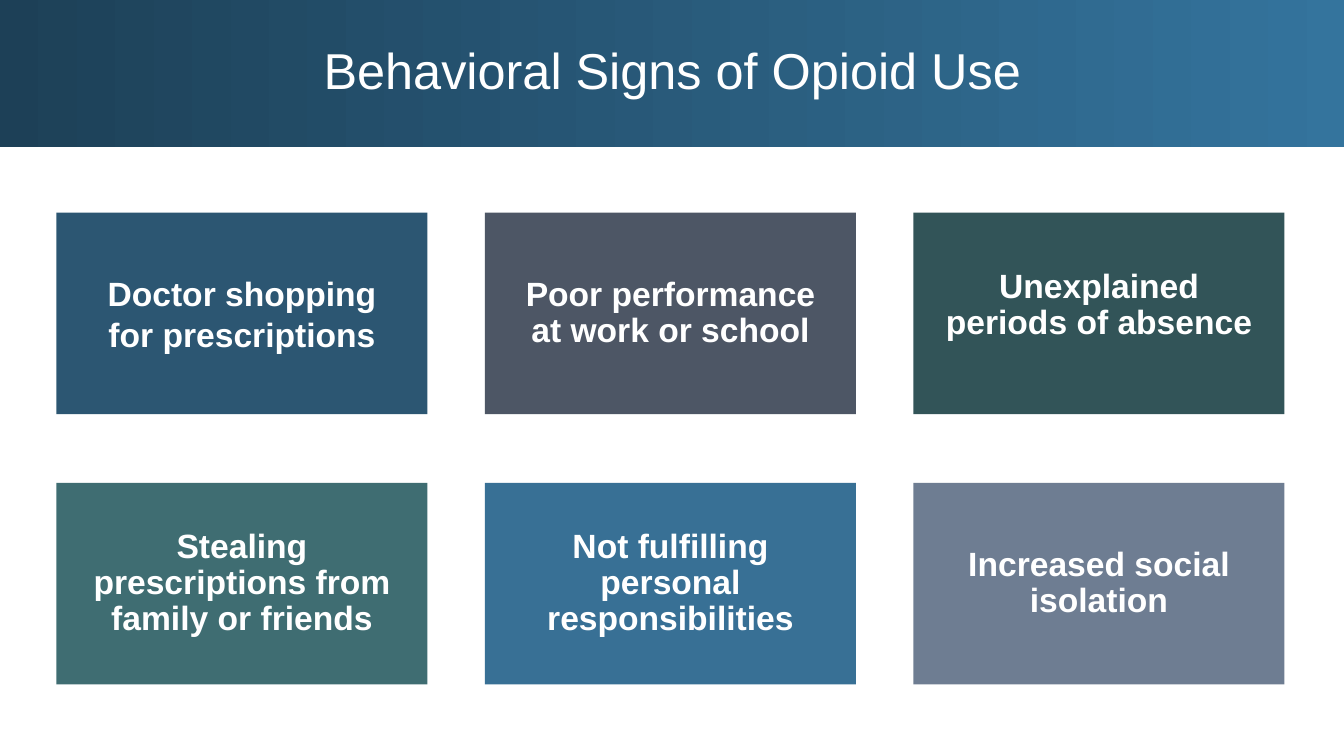
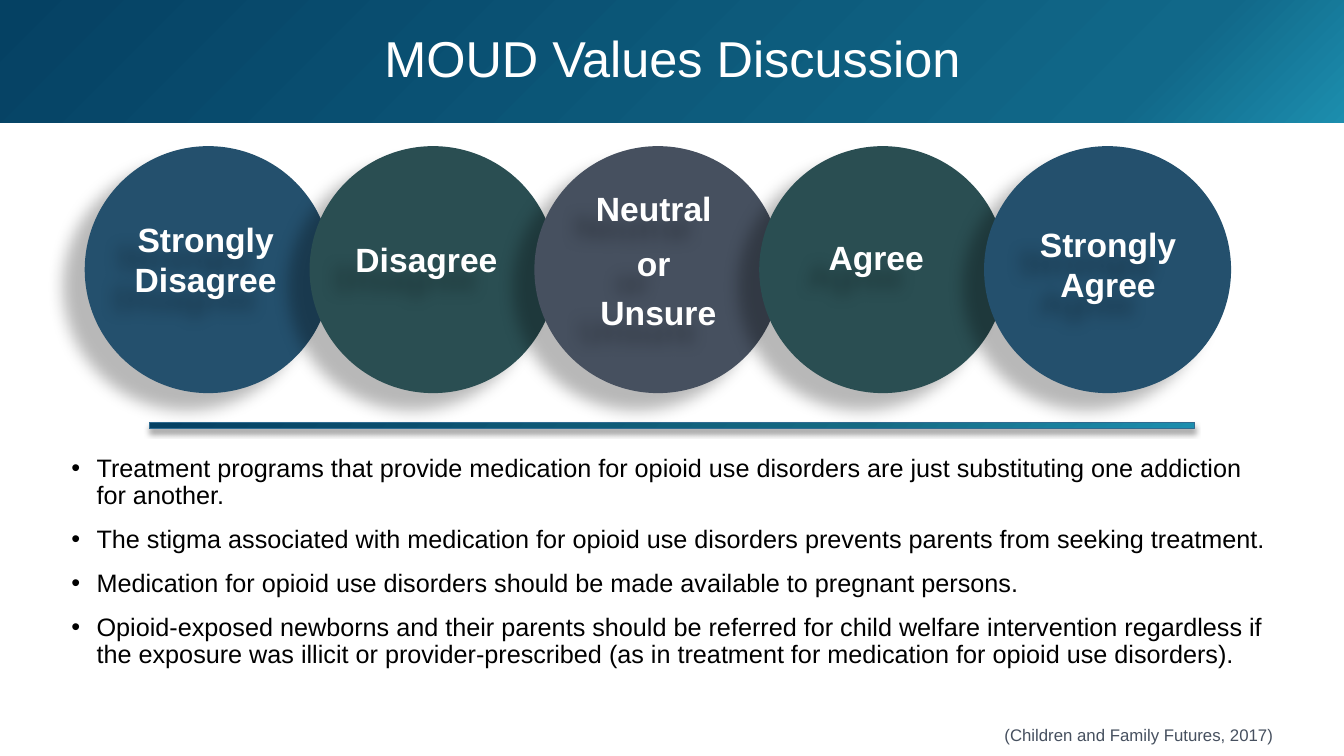
from lxml import etree
from pptx import Presentation
from pptx.dml.color import RGBColor
from pptx.enum.shapes import MSO_SHAPE
from pptx.enum.text import MSO_ANCHOR, PP_ALIGN
from pptx.oxml.ns import qn
from pptx.util import Inches, Pt

RECTANGLE, OVAL = MSO_SHAPE.RECTANGLE, MSO_SHAPE.OVAL
MIDDLE = MSO_ANCHOR.MIDDLE
LEFT, CENTER, RIGHT = PP_ALIGN.LEFT, PP_ALIGN.CENTER, PP_ALIGN.RIGHT

# Shared style
FONT = "Arial"
WHITE = RGBColor(0xFF, 0xFF, 0xFF)
BLACK = RGBColor(0x00, 0x00, 0x00)
NAVY = RGBColor(0x24, 0x50, 0x6D)
TEAL = RGBColor(0x38, 0x68, 0x6D)
SLATE = RGBColor(0x46, 0x50, 0x5F)
BLUE = RGBColor(0x30, 0x6B, 0x91)
PINE = RGBColor(0x2A, 0x4E, 0x52)
GREY = RGBColor(0x69, 0x78, 0x8E)
SKY = RGBColor(0x34, 0x74, 0x9D)
MIDNIGHT = RGBColor(0x1D, 0x40, 0x57)
AQUA = RGBColor(0x1C, 0x8E, 0xAE)
OCEAN = RGBColor(0x11, 0x68, 0x89)
LAGOON = RGBColor(0x15, 0x6A, 0x83)
DEEP_SEA = RGBColor(0x05, 0x41, 0x63)

# Gradient stops (percent, colour) and counter-clockwise angles
SIGNS_BAND = [(0, SKY), (100, MIDNIGHT)], 180
VALUES_BAND = [(0, AQUA), (16, OCEAN), (100, DEEP_SEA)], 135
SCALE_BAR = [(0, AQUA), (32, LAGOON), (100, DEEP_SEA)], 135

# Shadows: opacity percent, blur points, distance points, direction degrees
CIRCLE_SHADOW = (28, 11.8, 19.7, 141)
BAR_SHADOW = (40, 4, 3, 90)

# Text, colour, line spacing, bottom inset
SIGNS = [
    ("Doctor shopping for prescriptions", NAVY, 1, 0.05),
    ("Poor performance at work or school", SLATE, 0.9, 0.05),
    ("Unexplained periods of absence", PINE, 0.9, 0.2),
    ("Stealing prescriptions from family or friends", TEAL, 0.9, 0.05),
    ("Not fulfilling personal responsibilities", BLUE, 0.9, 0.05),
    ("Increased social isolation", GREY, 0.9, 0.05),
]

# Paragraphs, circle colour, label left, label top, line spacing
OPINIONS = [
    (["Strongly Disagree"], NAVY, 0.99, 1.92, 1),
    (["Disagree"], PINE, 3.18, 1.95, 0.9),
    (["Neutral ", "or ", "Unsure"], SLATE, 5.48, 1.93, 1),
    (["Agree"], PINE, 7.64, 1.93, 0.9),
    (["Strongly\nAgree"], NAVY, 9.94, 1.97, 1),
]

STATEMENTS = [
    "Treatment programs that provide medication for opioid use disorders are "
    "just substituting one addiction for another.",
    "The stigma associated with medication for opioid use disorders prevents "
    "parents from seeking treatment.",
    "Medication for opioid use disorders should be made available to pregnant "
    "persons.",
    "Opioid-exposed newborns and their parents should be referred for child "
    "welfare intervention regardless if the exposure was illicit or "
    "provider-prescribed (as in treatment for medication for opioid use "
    "disorders).",
]


def add_color(parent, color, opacity=None):
    element = etree.SubElement(parent, qn("a:srgbClr"), val=str(color))
    if opacity is not None:
        etree.SubElement(element, qn("a:alpha"), val=str(opacity * 1000))


def add_preset(slide, kind, left, top, width, height):
    shape = slide.shapes.add_shape(
        kind, Inches(left), Inches(top), Inches(width), Inches(height))
    shape.shadow.inherit = False
    shape.line.fill.background()
    return shape


def fill_solid(shape, color, opacity=None):
    shape.fill.solid()
    shape.fill.fore_color.rgb = color
    if opacity is not None:
        element = shape.element.spPr.find(".//" + qn("a:srgbClr"))
        etree.SubElement(element, qn("a:alpha"), val=str(opacity * 1000))


def fill_gradient(shape, stops, angle):
    shape.fill.gradient()
    shape.fill.gradient_angle = angle
    stop_list = shape.element.spPr.find(".//" + qn("a:gsLst"))
    for stop in list(stop_list):
        stop_list.remove(stop)
    for percent, color in stops:
        stop = etree.SubElement(stop_list, qn("a:gs"), pos=str(percent * 1000))
        add_color(stop, color)


def add_shadow(shape, opacity, blur, distance, direction):
    shape.shadow.inherit = False
    effects = shape.element.spPr.find(qn("a:effectLst"))
    shadow = etree.SubElement(
        effects, qn("a:outerShdw"), blurRad=str(int(Pt(blur))),
        dist=str(int(Pt(distance))), dir=str(direction * 60000),
        algn="ctr", rotWithShape="0")
    add_color(shadow, BLACK, opacity)


def add_bullet(paragraph):
    properties = paragraph._p.get_or_add_pPr()
    properties.set("marL", str(Inches(0.25)))
    properties.set("indent", str(Inches(-0.25)))
    etree.SubElement(properties, qn("a:buFont"), typeface=FONT)
    etree.SubElement(properties, qn("a:buChar"), char="•")


def write_text(shape, texts, size, color, bold=False, align=CENTER, spacing=1,
               before=(), after=0, bullets=False, insets=(0.1, 0.05, 0.1, 0.05)):
    """Write one paragraph per text; before lists the gaps between them."""
    frame = shape.text_frame
    frame.word_wrap = True
    frame.vertical_anchor = MIDDLE
    (frame.margin_left, frame.margin_top,
     frame.margin_right, frame.margin_bottom) = map(Inches, insets)
    for index, text in enumerate(texts):
        paragraph = frame.add_paragraph() if index else frame.paragraphs[0]
        if bullets:
            add_bullet(paragraph)
        paragraph.alignment = align
        paragraph.line_spacing = spacing
        paragraph.space_before = Pt(before[index - 1] if index else 0)
        paragraph.space_after = Pt(after)
        for line_number, line in enumerate(text.split("\n")):
            if line_number:
                paragraph.add_line_break()
            run = paragraph.add_run()
            run.text = line
            run.font.name = FONT
            run.font.size = Pt(size)
            run.font.bold = bold
            run.font.color.rgb = color


def add_text(slide, left, top, width, height, texts, size, color, **style):
    box = slide.shapes.add_textbox(
        Inches(left), Inches(top), Inches(width), Inches(height))
    write_text(box, texts, size, color, **style)
    return box


def add_title_band(slide, title, height, gradient):
    band = add_preset(slide, RECTANGLE, 0, 0, 13.34, height)
    fill_gradient(band, *gradient)
    write_text(band, [title], 36, WHITE, spacing=0.9)


def add_slide(presentation):
    slide = presentation.slides.add_slide(presentation.slide_layouts[6])
    slide.background.fill.solid()
    slide.background.fill.fore_color.rgb = WHITE
    return slide


def build_signs_slide(presentation):
    slide = add_slide(presentation)
    add_title_band(slide, "Behavioral Signs of Opioid Use", 1.46, SIGNS_BAND)

    # Grid of three columns and two rows
    for index, (text, color, spacing, bottom) in enumerate(SIGNS):
        row, column = divmod(index, 3)
        card = add_preset(slide, RECTANGLE, 0.56 + 4.25 * column,
                          2.11 + 2.68 * row, 3.68, 2)
        fill_solid(card, color, opacity=96)
        write_text(card, [text], 24, WHITE, bold=True, spacing=spacing,
                   insets=(0.3, 0.05, 0.3, bottom))


def build_values_slide(presentation):
    slide = add_slide(presentation)
    add_title_band(slide, "MOUD Values Discussion", 1.22, VALUES_BAND)

    # Bar under the scale
    bar = add_preset(slide, RECTANGLE, 1.48, 4.19, 10.37, 0.06)
    fill_gradient(bar, *SCALE_BAR)
    bar.line.color.rgb = BLUE
    bar.line.width = Pt(0.5)
    add_shadow(bar, *BAR_SHADOW)

    # Overlapping circles, then their labels on top
    for index, (_, color, *_) in enumerate(OPINIONS):
        circle = add_preset(slide, OVAL, 0.84 + 2.23 * index, 1.45, 2.45, 2.45)
        fill_solid(circle, color)
        add_shadow(circle, *CIRCLE_SHADOW)
    for texts, _, left, top, spacing in OPINIONS:
        label = add_text(slide, left, top, 2.1, 1.3, texts, 24, WHITE,
                         bold=True, spacing=spacing, before=(10, 6))
        add_shadow(label, *CIRCLE_SHADOW)

    # Statements and citation
    add_text(slide, 0.61, 4.35, 12.11, 2.46, STATEMENTS, 18, BLACK, align=LEFT,
             spacing=0.9, before=(6, 6, 6), after=6, bullets=True)
    add_text(slide, 8.13, 7.09, 4.5, 0.4, ["(Children and Family Futures, 2017)"],
             12, SLATE, align=RIGHT, insets=(0.1, 0.05, 0, 0.05))


def main():
    presentation = Presentation()
    presentation.slide_width = Inches(13.33)
    presentation.slide_height = Inches(7.5)
    build_signs_slide(presentation)
    build_values_slide(presentation)
    presentation.save("out.pptx")


if __name__ == "__main__":
    main()
